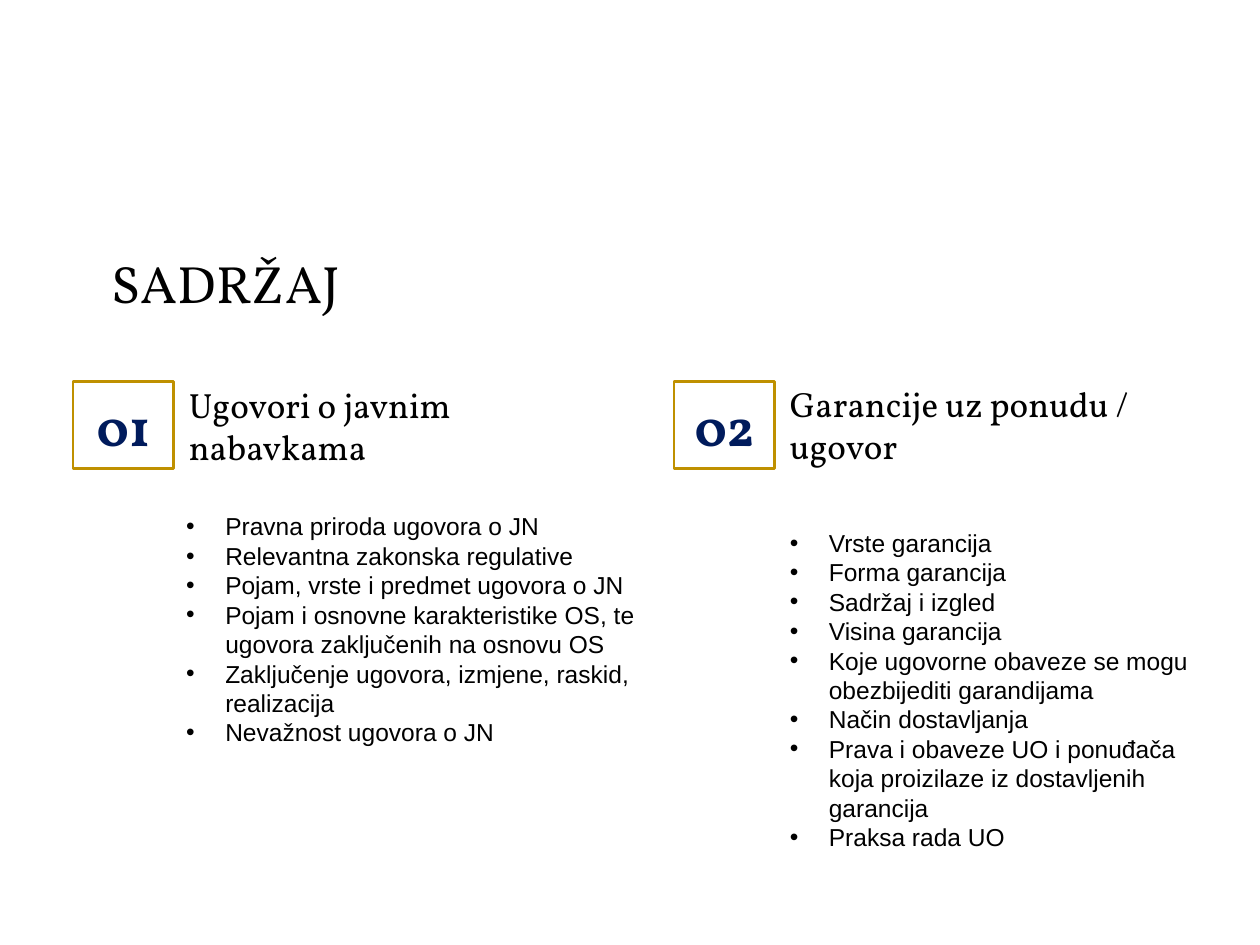
from lxml.etree import SubElement
from pptx import Presentation
from pptx.dml.color import RGBColor
from pptx.enum.shapes import MSO_SHAPE
from pptx.enum.text import MSO_ANCHOR as Anchor, MSO_AUTO_SIZE as AutoSize, PP_ALIGN as Align
from pptx.oxml.ns import qn
from pptx.util import Inches, Pt

COLORS = {"text": "000000", "number": "001B5C", "frame": "BF9000"}
HEADING_FONT, BODY_FONT = "Vollkorn", "Arial"

SECTIONS = [
    {
        "number": "01",
        "frame": (0.58, 3.03, 0.8, 0.69),
        "heading": "Ugovori o javnim nabavkama",
        "heading_area": (1.4, 3.02, 3.66, 0.79),
        "topics": [
            "Pravna priroda ugovora o JN",
            "Relevantna zakonska regulative",
            "Pojam, vrste i predmet ugovora o JN",
            "Pojam i osnovne karakteristike OS, te ugovora zaključenih na osnovu OS",
            "Zaključenje ugovora, izmjene, raskid, realizacija",
            "Nevažnost ugovora o JN",
        ],
        "topics_area": (1.38, 4.01, 4.1, 1.99),
    },
    {
        "number": "02",
        "frame": (5.35, 3.03, 0.8, 0.69),
        "heading": "Garancije uz ponudu / ugovor",
        "heading_area": (6.17, 3.18, 3.13, 0.62),
        "topics": [
            "Vrste garancija",
            "Forma garancija",
            "Sadržaj i izgled",
            "Visina garancija",
            "Koje ugovorne obaveze se mogu obezbijediti garandijama",
            "Način dostavljanja",
            "Prava i obaveze UO i ponuđača koja proizilaze iz dostavljenih garancija",
            "Praksa rada UO",
        ],
        "topics_area": (6.17, 4.14, 3.39, 2.69),
    },
]


class ContentsSlide:
    """Styled builder for the elements of a contents slide."""

    def __init__(self, slide):
        self.slide = slide

    def color(self, name):
        return RGBColor.from_string(COLORS[name])

    def add_run(self, paragraph, text, size, font=HEADING_FONT, color="text", bold=False):
        run = paragraph.add_run()
        run.text = text
        run.font.size = Pt(size)
        run.font.name = font
        run.font.bold = bold
        run.font.color.rgb = self.color(color)

    def set_frame(self, frame, anchor, inset=0.1):
        frame.word_wrap = True
        frame.vertical_anchor = anchor
        frame.margin_left = frame.margin_right = Inches(0.1)
        frame.margin_top = frame.margin_bottom = Inches(inset)
        return frame

    def add_area(self, area, anchor, inset=0.1):
        box = self.slide.shapes.add_textbox(*map(Inches, area))
        return self.set_frame(box.text_frame, anchor, inset)

    def heading(self, text, area, size, anchor=Anchor.TOP):
        self.add_run(self.add_area(area, anchor).paragraphs[0], text, size)

    def number(self, text, area):
        square = self.slide.shapes.add_shape(MSO_SHAPE.RECTANGLE, *map(Inches, area))
        square.shadow.inherit = False
        square.fill.background()
        square.line.color.rgb = self.color("frame")
        square.line.width = Pt(1.5)
        paragraph = self.set_frame(square.text_frame, Anchor.MIDDLE).paragraphs[0]
        paragraph.alignment = Align.CENTER
        self.add_run(paragraph, text, 30, color="number", bold=True)

    def bullets(self, topics, area):
        frame = self.add_area(area, Anchor.TOP, inset=0.05)
        frame.auto_size = AutoSize.SHAPE_TO_FIT_TEXT
        for index, topic in enumerate(topics):
            paragraph = frame.add_paragraph() if index else frame.paragraphs[0]
            properties = paragraph._p.get_or_add_pPr()
            indent = Inches(0.31)
            properties.set("marL", str(indent))
            properties.set("indent", str(-indent))
            bullet_color = SubElement(properties, qn("a:buClr"))
            SubElement(bullet_color, qn("a:srgbClr"), val=COLORS["text"])
            SubElement(properties, qn("a:buFont"), typeface=BODY_FONT)
            SubElement(properties, qn("a:buChar"), char="•")
            self.add_run(paragraph, topic, 14, BODY_FONT)


def main():
    deck = Presentation()
    deck.slide_width, deck.slide_height = Inches(10), Inches(7.5)
    contents = ContentsSlide(deck.slides.add_slide(deck.slide_layouts[6]))
    contents.heading("SADRŽAJ", (0.79, 1.89, 8.43, 0.63), 30)
    for section in SECTIONS:
        contents.number(section["number"], section["frame"])
        contents.heading(section["heading"], section["heading_area"], 20, Anchor.BOTTOM)
        contents.bullets(section["topics"], section["topics_area"])
    deck.save("out.pptx")


if __name__ == "__main__":
    main()
